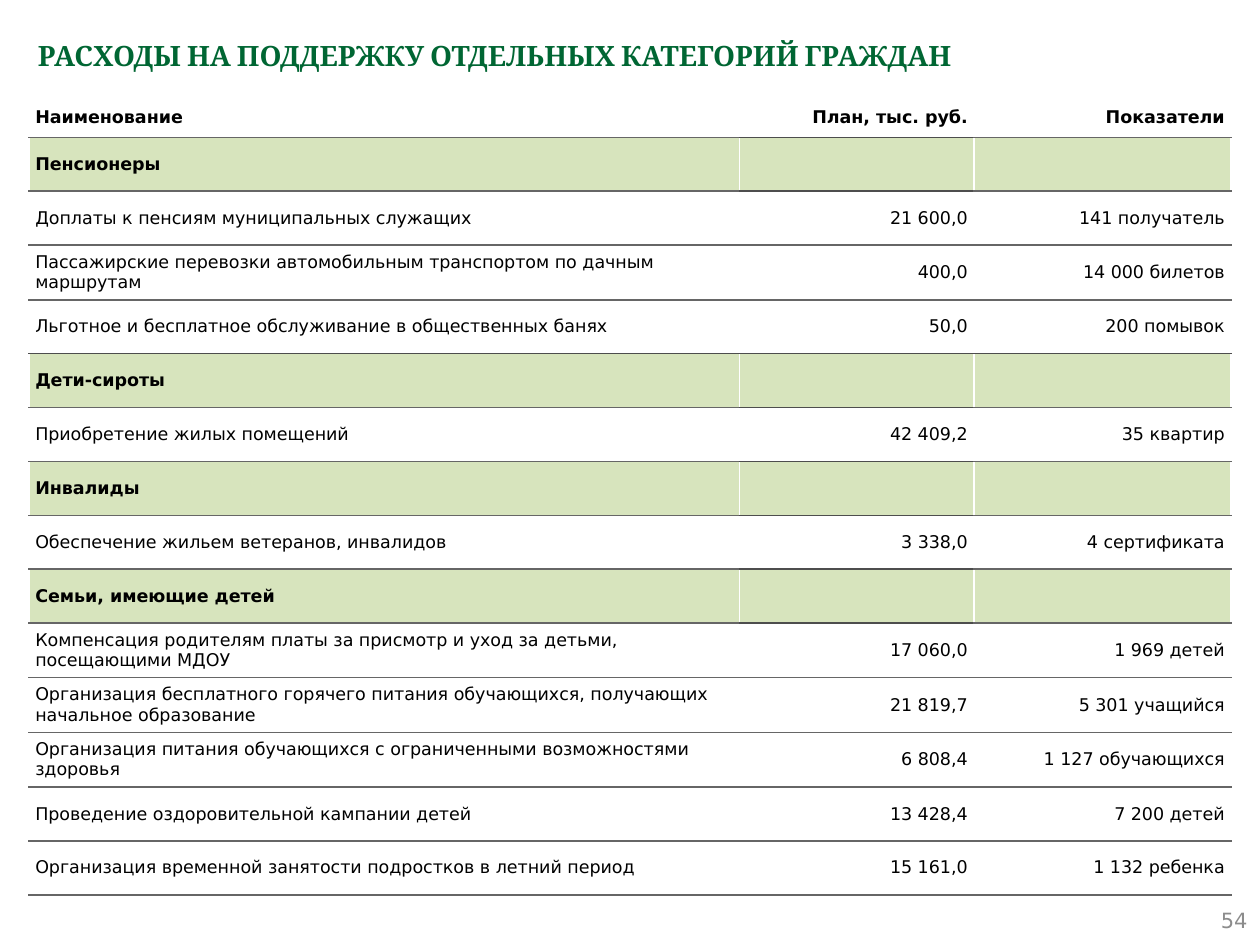
from lxml import etree
from pptx import Presentation
from pptx.dml.color import RGBColor
from pptx.enum.text import MSO_ANCHOR, MSO_AUTO_SIZE, PP_ALIGN
from pptx.oxml.ns import qn
from pptx.util import Inches, Pt

LEFT, RIGHT = PP_ALIGN.LEFT, PP_ALIGN.RIGHT
TOP, MIDDLE = MSO_ANCHOR.TOP, MSO_ANCHOR.MIDDLE
NO_FIT = MSO_AUTO_SIZE.NONE

TITLE = "РАСХОДЫ НА ПОДДЕРЖКУ ОТДЕЛЬНЫХ КАТЕГОРИЙ ГРАЖДАН"
PAGE_NUMBER = "54"
HEADER = ("Наименование", "План, тыс. руб.", "Показатели")
GROUPS = {
    "Пенсионеры": [
        ("Доплаты к пенсиям муниципальных служащих", "21 600,0", "141 получатель"),
        ("Пассажирские перевозки автомобильным транспортом по дачным маршрутам",
         "400,0", "14 000 билетов"),
        ("Льготное и бесплатное обслуживание в общественных банях",
         "50,0", "200 помывок"),
    ],
    "Дети-сироты": [("Приобретение жилых помещений", "42 409,2", "35 квартир")],
    "Инвалиды": [("Обеспечение жильем ветеранов, инвалидов", "3 338,0", "4 сертификата")],
    "Семьи, имеющие детей": [
        ("Компенсация родителям платы за присмотр и уход за детьми, посещающими МДОУ",
         "17 060,0", "1 969 детей"),
        ("Организация бесплатного горячего питания обучающихся, получающих "
         "начальное образование", "21 819,7", "5 301 учащийся"),
        ("Организация питания обучающихся с ограниченными возможностями здоровья",
         "6 808,4", "1 127 обучающихся"),
        ("Проведение оздоровительной кампании детей", "13 428,4", "7 200 детей"),
        ("Организация временной занятости подростков в летний период",
         "15 161,0", "1 132 ребенка"),
    ],
}
COLORS = {"title": "006633", "text": "000000", "number": "8C8C8C", "group": "D7E4BD",
          "white": "FFFFFF", "line": "666666", "dark_line": "4D4D4D"}
COLUMN_WIDTHS = (5.64, 1.86, 2.04)
TABLE_LEFT, TABLE_TOP, TABLE_HEIGHT, HEADER_HEIGHT = 0.23, 0.8, 6.28, 0.29
DARK_EDGE = 5  # the line above the second group is dark all the way across


def style_text(para, size, color, font="DejaVu Sans", bold=False, align=LEFT):
    para.alignment = align
    for span in para.runs:
        span.font.size = Pt(size)
        span.font.name = font
        span.font.bold = bold
        span.font.color.rgb = RGBColor.from_string(COLORS[color])


def add_border(cell, side, color):
    properties = cell._tc.get_or_add_tcPr()
    line = etree.SubElement(properties, qn("a:ln" + side), w=str(Pt(1)))
    fill = etree.SubElement(line, qn("a:solidFill"))
    etree.SubElement(fill, qn("a:srgbClr"), val=COLORS[color])


def edge_color(edge, column, group_rows):
    """Colour of the horizontal line above row number `edge`."""
    if edge == 0:
        return "white"
    beside_group = edge in group_rows or edge - 1 in group_rows
    return "dark_line" if edge == DARK_EDGE or (column == 1 and beside_group) else "line"


def add_expense_table(page):
    rows, group_rows = [HEADER], set()
    for group, items in GROUPS.items():
        group_rows.add(len(rows))
        rows += [(group, "", ""), *items]

    frame = page.shapes.add_table(
        len(rows), len(HEADER), Inches(TABLE_LEFT), Inches(TABLE_TOP),
        Inches(sum(COLUMN_WIDTHS)), Inches(TABLE_HEIGHT))
    table = frame.table
    table.first_row = table.horz_banding = False
    for column, width in zip(table.columns, COLUMN_WIDTHS):
        column.width = Inches(width)
    row_height = (TABLE_HEIGHT - HEADER_HEIGHT) / (len(rows) - 1)
    last_column = len(HEADER) - 1

    for r, values in enumerate(rows):
        table.rows[r].height = Inches(row_height if r else HEADER_HEIGHT)
        is_group = r in group_rows
        for c, value in enumerate(values):
            cell = table.cell(r, c)
            cell.margin_left = cell.margin_right = Inches(0.05)
            cell.margin_top = cell.margin_bottom = Inches(0.05)
            cell.vertical_anchor = MIDDLE if r else TOP
            if value:
                cell.text = value
                style_text(cell.text_frame.paragraphs[0], 10, "text",
                           bold=is_group or r == 0, align=RIGHT if c else LEFT)
            if not is_group or c == 0:
                add_border(cell, "L", "white")
            if not is_group or c == last_column:
                add_border(cell, "R", "white")
            add_border(cell, "T", edge_color(r, c, group_rows))
            add_border(cell, "B", edge_color(r + 1, c, group_rows))
            cell.fill.solid()
            cell.fill.fore_color.rgb = RGBColor.from_string(
                COLORS["group" if is_group else "white"])


def main():
    deck = Presentation()
    deck.slide_width, deck.slide_height = Inches(10), Inches(7.5)
    page = deck.slides.add_slide(deck.slide_layouts[5])

    title = page.shapes.title
    title.left, title.top = Inches(0.2), Inches(0.2)
    title.width, title.height = Inches(9.61), Inches(0.79)
    title.text_frame.text = TITLE
    title.text_frame.auto_size = NO_FIT
    title.text_frame.vertical_anchor = TOP
    heading = title.text_frame.paragraphs[0]
    heading.line_spacing = 1.2
    style_text(heading, 16, "title", font="Cambria", bold=True)

    number = page.shapes.add_textbox(Inches(7.67), Inches(7.1), Inches(2.33), Inches(0.4))
    number.text_frame.text = PAGE_NUMBER
    number.text_frame.word_wrap = True
    number.text_frame.vertical_anchor = MIDDLE
    style_text(number.text_frame.paragraphs[0], 12, "number", align=RIGHT)

    add_expense_table(page)
    deck.save("out.pptx")


if __name__ == "__main__":
    main()
